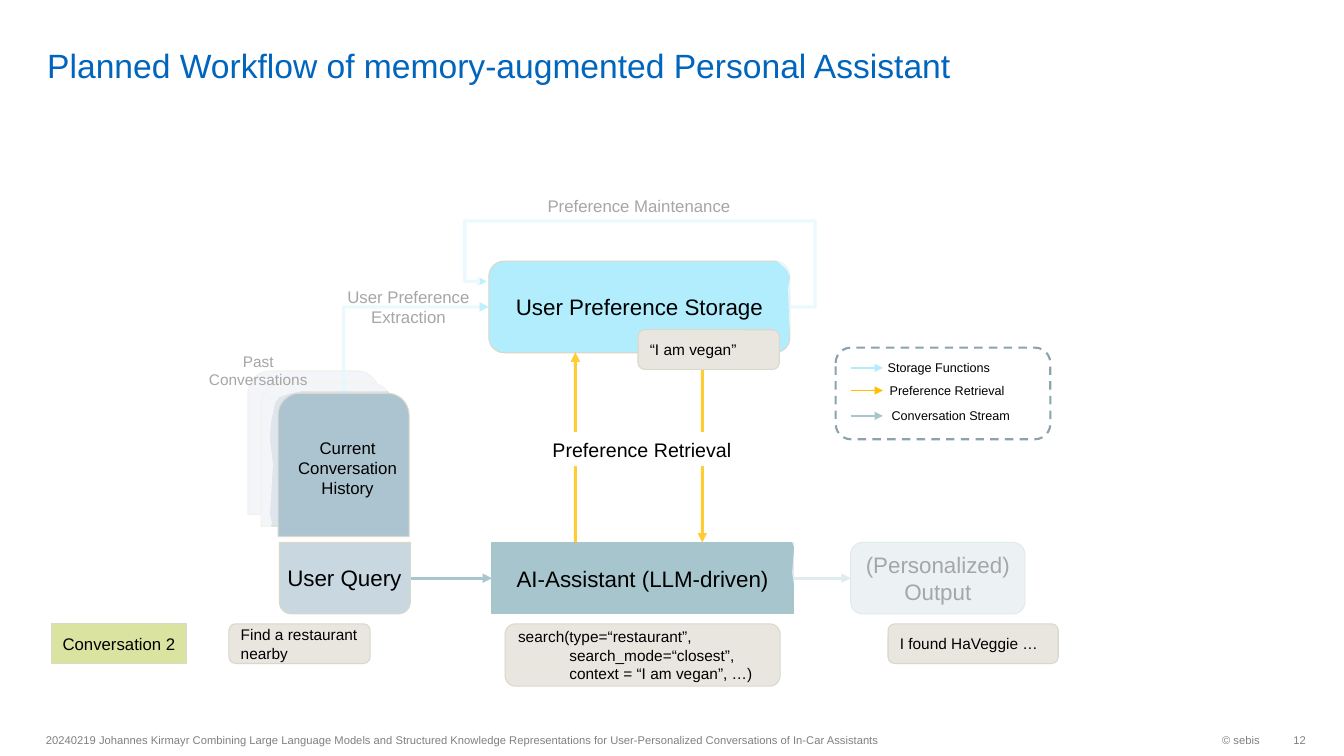
from lxml import etree
from pptx import Presentation
from pptx import util as u
from pptx.dml.color import RGBColor
from pptx.enum import dml, shapes, text
from pptx.oxml.ns import qn

class T:
    font = "Arial"
    title, ink, muted, white, border = "0065BD", "000000", "808080", "FFFFFF", "DAD7CB"
    storage, retrieval, stream = "B2EDFD", "FFC000", "A7C6CD"
    assistant, output, query, dashed = "A7C5CD", "C9D8E1", "C8D7E0", "8AA4AB"
    cards, bubble, tag = ("E1E4EB", "DFE5EC", "ABC4CF"), "E8E6DF", "DBE3A1"
    title_size, node_size, link_size, label_size = 24, 16, 14, 12
    small_size, legend_size, footer_size = 11, 9, 8

KIND = shapes.MSO_SHAPE
LEFT, CENTER, RIGHT = text.PP_ALIGN.LEFT, text.PP_ALIGN.CENTER, text.PP_ALIGN.RIGHT
TOP, MIDDLE, BOTTOM = text.MSO_ANCHOR.TOP, text.MSO_ANCHOR.MIDDLE, text.MSO_ANCHOR.BOTTOM
VEIL = (
    (75, 390), (83, 394), (105, 394), (112, 384), (114, 378), (112, 369), (115, 320), (112, 295),
    (113, 278), (117, 259), (121, 253), (130, 250), (144, 247), (235, 247), (268, 250), (289, 248),
    (298, 241), (309, 231), (316, 219), (320, 186), (320, 142), (321, 127), (326, 118), (334, 112),
    (369, 110), (421, 104), (511, 106), (590, 108), (602, 111), (614, 117), (625, 127), (628, 134),
    (626, 145), (627, 176), (630, 223), (629, 250), (631, 306), (636, 345), (635, 367), (629, 374),
    (617, 380), (626, 387), (632, 402), (630, 427), (634, 453), (641, 474), (650, 489), (665, 500),
    (697, 514), (748, 528), (808, 539), (824, 540), (850, 538), (879, 531), (900, 524), (918, 507),
    (931, 478), (933, 466), (930, 435), (925, 406), (911, 382), (885, 355), (857, 338), (814, 324),
    (783, 318), (763, 316), (712, 318), (664, 315), (653, 300), (647, 268), (648, 221), (654, 200),
    (667, 171), (687, 136), (694, 118), (694, 98), (687, 76), (667, 39), (659, 23), (645, 6),
    (632, 3), (591, 0), (531, 2), (488, 7), (400, 11), (334, 19), (260, 27), (176, 42), (121, 56),
    (96, 65), (63, 85), (44, 100), (30, 113), (10, 142), (2, 161), (2, 203), (0, 233), (2, 288),
    (9, 329), (16, 356), (23, 377), (32, 394), (42, 403), (54, 406), (67, 401), (82, 395))

def write(sp, words, size=T.label_size, colour=T.ink, align=CENTER, anchor=MIDDLE, insets=None):
    tf = sp.text_frame
    tf.word_wrap, tf.auto_size, tf.vertical_anchor = True, text.MSO_AUTO_SIZE.NONE, anchor
    if insets:
        tf.margin_left, tf.margin_top, tf.margin_right, tf.margin_bottom = map(u.Cm, insets)
    for i, line in enumerate(words.split("\n")):
        p = tf.add_paragraph() if i else tf.paragraphs[0]
        p.alignment = align
        r = p.add_run()
        r.text, r.font.name, r.font.size = line, T.font, u.Pt(size)
        r.font.color.rgb = RGBColor.from_string(colour)

def label(s, box, words, anchor=TOP, **style):
    write(s.shapes.add_textbox(*map(u.Cm, box)), words, anchor=anchor, **style)

def paint(fmt, colour):
    if colour:
        fmt.solid()
        fmt.fore_color.rgb = RGBColor.from_string(colour)
    else:
        fmt.background()

def node(s, kind, box, fill=None, line=T.border, width=0.75, words="", **style):
    sp = s.shapes.add_shape(kind, *map(u.Cm, box))
    sp.shadow.inherit = False
    sp.line.width = u.Pt(width)
    paint(sp.fill, fill)
    paint(sp.line.fill, line)
    if words:
        write(sp, words, **style)
    return sp

def set_alpha(sp, percent):
    for clr in sp._element.spPr.iter(qn("a:srgbClr")):
        etree.SubElement(clr, qn("a:alpha"), val=str(percent * 1000))

def arrow(s, start, end, colour, width=2.25, alpha=100, bend="line", adjust=()):
    c = s.shapes.add_connector(shapes.MSO_CONNECTOR.STRAIGHT, *map(u.Cm, (*start, *end)))
    c.line.width = u.Pt(width)
    paint(c.line.fill, colour)
    set_alpha(c, alpha)
    sp_pr = c._element.spPr
    geom = sp_pr.find(qn("a:prstGeom"))
    geom.set("prst", bend)
    for i, value in enumerate(adjust, 1):
        etree.SubElement(geom.find(qn("a:avLst")), qn("a:gd"), name=f"adj{i}", fmla=f"val {value}")
    etree.SubElement(sp_pr.find(qn("a:ln")), qn("a:tailEnd"), type="triangle")
    etree.SubElement(sp_pr, qn("a:effectLst"))
    return c

def rising_arrow(s, start, end, colour, **style):
    mid_x, mid_y = (start[0] + end[0]) / 2, (start[1] + end[1]) / 2
    dx, dy = (end[0] - start[0]) / 2, (start[1] - end[1]) / 2
    c = arrow(s, (mid_x + dy, mid_y + dx), (mid_x - dy, mid_y - dx), colour, bend="bentConnector2", **style)
    c._element.spPr.find(qn("a:xfrm")).set("rot", "5400000")

def heading(s, box):
    title = s.shapes.title
    title.left, title.top, title.width, title.height = map(u.Cm, box)
    write(title, "Planned Workflow of memory-augmented Personal Assistant", size=T.title_size,
          colour=T.title, align=LEFT, anchor=BOTTOM, insets=(0.25, 0, 0.25, 0))

def footer(s, box):
    x, y, w, h = box
    style = dict(size=T.footer_size, colour=T.muted, anchor=MIDDLE)
    label(s, (x, y, 23.8, h), "20240219 Johannes Kirmayr Combining Large Language Models and Structured Knowledge "
          "Representations for User-Personalized Conversations of In-Car Assistants", align=LEFT, **style)
    label(s, (x + w - 6.85, y, 5.94, h), "© sebis", align=RIGHT, **style)
    label(s, (x + w - 0.91, y, 0.91, h), "12", align=RIGHT, insets=(0.25, 0.13, 0, 0.13), **style)

def history(s, box):
    x, y, w, h = box
    for (dx, dy), fill in zip(((0, 0), (0.33, 0.3), (0.76, 0.56)), T.cards):
        node(s, KIND.ROUND_2_SAME_RECTANGLE, (x + dx, y + dy, w, h), fill)
    label(s, (x + 0.91, y + 1.55, 3.2, 1.8), "Current Conversation History")
    label(s, (x - 1.91, y - 0.61, 4.34, 1.19), "Past\nConversations", size=T.small_size)

def stream(s, box):
    x, y, w, h = box
    node(s, KIND.ROUND_2_SAME_RECTANGLE, (x, y, 3.3, h), T.query).rotation = 180
    label(s, (x - 0.05, y + 0.43, 3.56, 0.94), "User Query", size=T.node_size, align=LEFT)
    node(s, KIND.RECTANGLE, (x + 5.36, y, 7.59, h), T.assistant, T.assistant,
         words="AI-Assistant (LLM-driven)", size=T.node_size)
    node(s, KIND.ROUNDED_RECTANGLE, (x + w - 4.39, y, 4.39, h), T.output, T.assistant,
         words="(Personalized) Output", size=T.node_size)
    for begin, end in ((3.32, 5.36), (12.95, w - 4.39)):
        arrow(s, (x + begin, y + h / 2), (x + end, y + h / 2), T.stream)

def storage(s, box):
    x, y, w, h = box
    node(s, KIND.ROUNDED_RECTANGLE, box, T.storage, words="User Preference Storage", size=T.node_size)
    rising_arrow(s, (x - 3.66, y + 3.33), (x, y + h / 2), T.storage, alpha=80)
    label(s, (x - 4.73, y + 0.51, 5.41, 1.27), "User Preference Extraction")
    arrow(s, (x + w, y + h / 2), (x - 0.05, y + 0.51), T.storage, alpha=80,
          bend="bentConnector5", adjust=(-8300, 336300, 107300))
    label(s, (x + 1.04, y - 1.78, 5.49, 0.76), "Preference Maintenance")

def retrieval(s, box):
    x, y, w, h = box
    arrow(s, (x + 2.51, y + h), (x + 2.51, y), T.retrieval, alpha=80)
    arrow(s, (x + 5.71, y), (x + 5.71, y + h), T.retrieval, alpha=80)
    node(s, KIND.RECTANGLE, (x, y + 2.01, w, 0.86), T.white, None, words="Preference Retrieval", size=T.link_size)

def legend(s, box):
    x, y, w, h = box
    node(s, KIND.ROUNDED_RECTANGLE, box, None, T.dashed, 1.5).line.dash_style = dml.MSO_LINE.DASH
    rows = ((0.51, T.storage, "Storage Functions"), (1.08, T.retrieval, "Preference Retrieval"),
            (1.72, T.stream, "Conversation Stream"))
    for i, (dy, colour, words) in enumerate(rows):
        arrow(s, (x + 0.38, y + dy), (x + 1.19, y + dy), colour, width=1.35)
        label(s, (x + 1.06 + i * 0.05, y + dy - 0.32, 4.5, 0.64), words, size=T.legend_size, align=LEFT)

def veil(s, box):
    builder = s.shapes.build_freeform(*VEIL[0], scale=u.Cm(box[2]) / 933)
    builder.add_line_segments(VEIL[1:], close=True)
    sp = builder.convert_to_shape(*map(u.Cm, box[:2]))
    sp.shadow.inherit = False
    paint(sp.fill, T.white)
    paint(sp.line.fill, None)
    set_alpha(sp, 65)

def example(s, box):
    x, y, w, h = box
    code = "search(type=“restaurant”,\n            search_mode=“closest”,\n            context = “I am vegan”, …)"
    bubbles = ((4.47, 0, 3.56, 1, "Find a restaurant nearby"), (14.78, -7.41, 3.56, 1, "“I am vegan”"),
               (11.43, 0, 6.93, h, code), (w - 4.29, 0, 4.29, 1, "I found HaVeggie …"))
    for dx, dy, width, height, words in bubbles:
        node(s, KIND.ROUNDED_RECTANGLE, (x + dx, y + dy, width, height), T.bubble,
             words=words, size=T.small_size, align=LEFT)
    node(s, KIND.RECTANGLE, (x, y, 3.4, 1), T.tag, words="Conversation 2")

prs = Presentation()
prs.slide_width, prs.slide_height = u.Cm(33.87), u.Cm(19.05)
s = prs.slides.add_slide(prs.slide_layouts[5])
heading(s, (0.94, 0.13, 29.41, 2.01))
footer(s, (0.91, 18.24, 32, 0.81))
history(s, (6.25, 9.35, 3.3, 3.61))
stream(s, (7.04, 13.67, 18.79, 1.8))
storage(s, (12.32, 6.58, 7.59, 2.31))
retrieval(s, (11.99, 8.88, 8.38, 4.79))
legend(s, (21.06, 8.76, 5.41, 2.31))
veil(s, (3.96, 3.58, 23.7, 13.72))
example(s, (1.3, 15.72, 25.37, 1.57))
prs.save("out.pptx")
